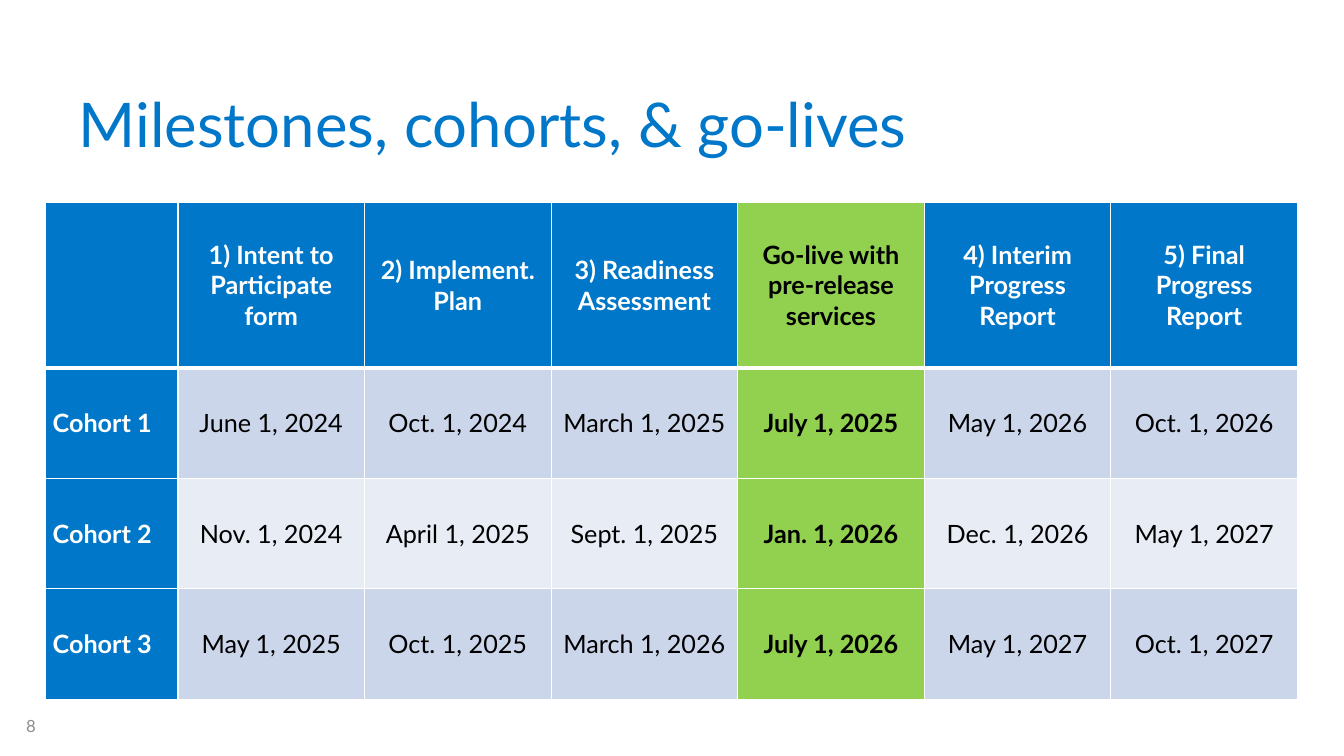
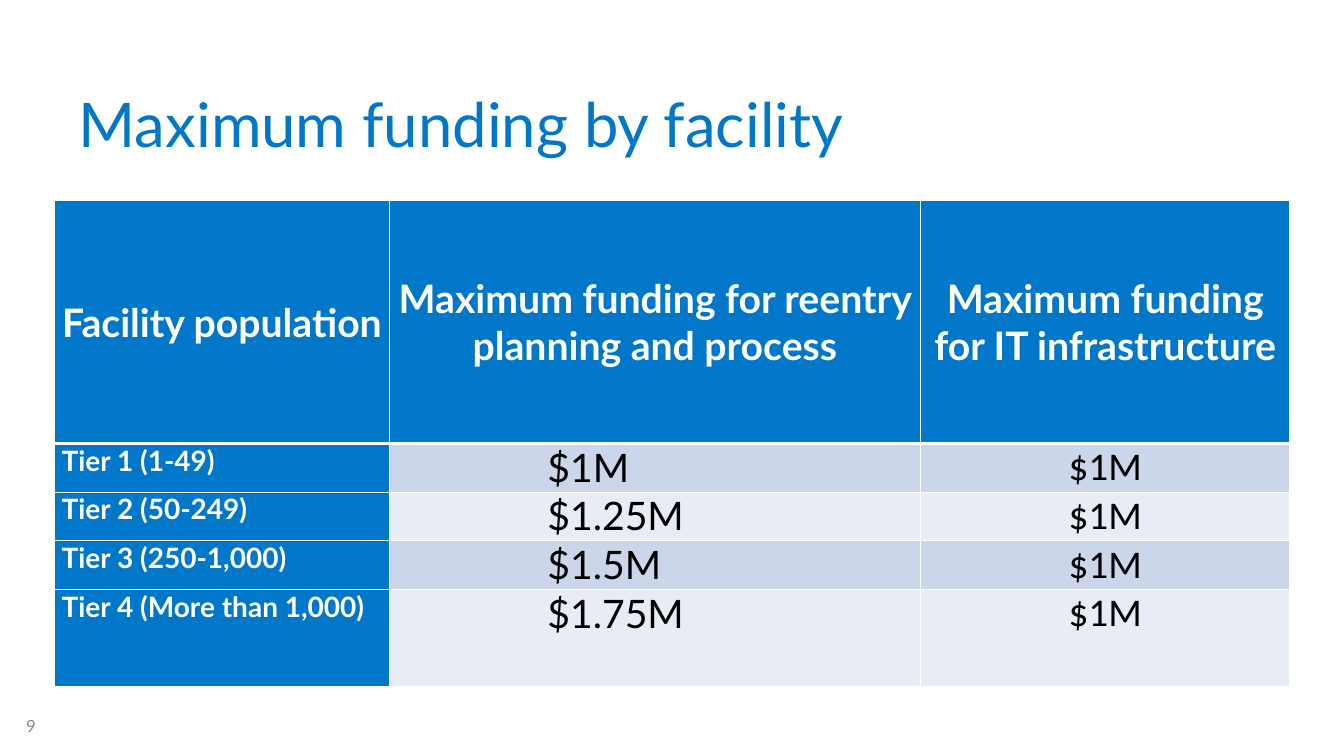
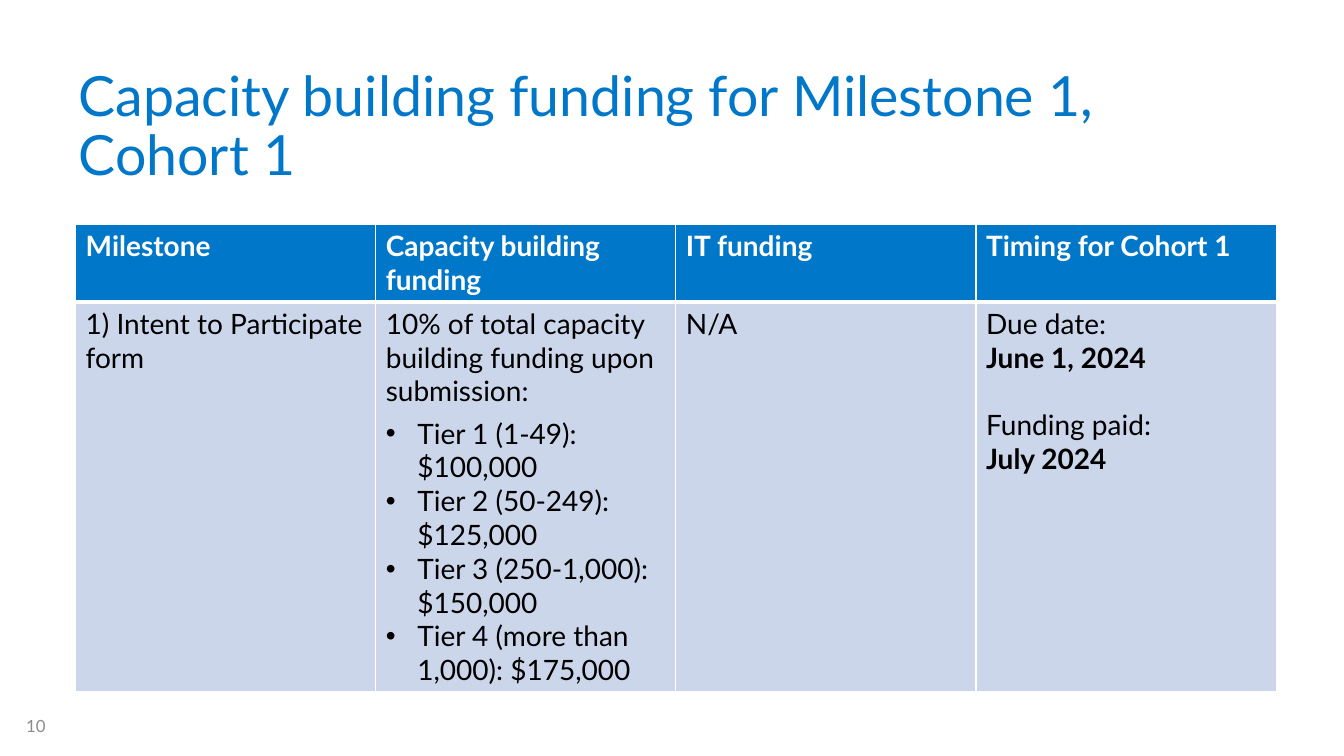
"""Build three slides on milestones, funding by facility and Milestone 1 funding."""
from pptx import Presentation
from pptx import util as u
from pptx.dml.color import RGBColor
from pptx.enum import text
from pptx.oxml import parse_xml
from pptx.oxml.ns import nsdecls

Pt = u.Pt
BLUE = RGBColor(0x00, 0x77, 0xC8)
GREEN = RGBColor(0x92, 0xD0, 0x50)
BAND_DARK = RGBColor(0xCC, 0xD6, 0xEB)
BAND_LIGHT = RGBColor(0xE7, 0xEC, 0xF5)
WHITE = RGBColor(0xFF, 0xFF, 0xFF)
BLACK = RGBColor(0x00, 0x00, 0x00)
GREY = RGBColor(0x8C, 0x8C, 0x8C)
FONT = "Lato"
CENTER, LEFT = text.PP_ALIGN.CENTER, text.PP_ALIGN.LEFT
MIDDLE, TOP = text.MSO_ANCHOR.MIDDLE, text.MSO_ANCHOR.TOP

TITLE_BOX = (49, 49.7, 857.5, 83.5)
NUMBER_BOX = (11.5, 511.9, 72.7, 13)
TIGHT, ROOMY = (5.04, 0), (7.2, 3.6)
BULLET_INDENT = 22.5

MILESTONES = [
    ["", "1) Intent to Participate form", "2) Implement.\nPlan", "3) Readiness Assessment",
     "Go-live with pre-release services", "4) Interim Progress Report", "5) Final Progress Report"],
    ["Cohort 1", "June 1, 2024", "Oct. 1, 2024", "March 1, 2025",
     "July 1, 2025", "May 1, 2026", "Oct. 1, 2026"],
    ["Cohort 2", "Nov. 1, 2024", "April 1, 2025", "Sept. 1, 2025",
     "Jan. 1, 2026", "Dec. 1, 2026", "May 1, 2027"],
    ["Cohort 3", "May 1, 2025", "Oct. 1, 2025", "March 1, 2026",
     "July 1, 2026", "May 1, 2027", "Oct. 1, 2027"],
]
FACILITIES = [
    ["Facility population", "Maximum funding for reentry planning and process",
     "Maximum funding for IT infrastructure"],
    ["Tier 1 (1-49)", "$1M", "$1M"],
    ["Tier 2 (50-249)", "$1.25M", "$1M"],
    ["Tier 3 (250-1,000)", "$1.5M", "$1M"],
    ["Tier 4 (More than 1,000)", "$1.75M", "$1M"],
]
TIERS = ["Tier 1 (1-49): $100,000", "Tier 2 (50-249): $125,000",
         "Tier 3 (250-1,000): $150,000", "Tier 4 (more than 1,000): $175,000"]
CAPACITY = [
    ["Milestone", "Capacity building funding", "IT funding", "Timing for Cohort 1"],
    ["1) Intent to Participate form",
     [{"text": "10% of total capacity building funding upon submission:", "after": 6}]
     + [{"text": tier, "bullet": True} for tier in TIERS],
     "N/A",
     [{"text": "Due date:\n", "strong": "June 1, 2024"},
      {"text": "Funding paid:\n", "strong": "July 2024", "before": 24}]],
]


def milestone_style(row, column):
    """Style a cell of the milestone table."""
    style = {"size": 18, "anchor": MIDDLE, "align": CENTER if column else LEFT}
    if column == 4:
        style.update(fill=GREEN, color=BLACK, bold=True)
    return style


def facility_style(row, column):
    """Style a cell of the facility table."""
    if row == 0:
        return {"size": 28, "anchor": MIDDLE, "align": CENTER}
    return [{"size": 20, "after": 3},
            {"size": 28, "after": 3, "indent": 108},
            {"size": 28, "after": 3, "align": CENTER, "font": "Calibri"}][column]


def capacity_style(row, column):
    """Style a cell of the capacity table."""
    return {"size": 20}


SLIDES = [
    {"title": "Milestones, cohorts, & go-lives", "title_size": 44, "rows": MILESTONES,
     "style": milestone_style, "at": (32.6, 144.7), "insets": TIGHT, "side_header": True,
     "widths": [94.5] + [133.3] * 6, "heights": [118] + [79] * 3},
    {"title": "Maximum funding by facility", "title_size": 44, "rows": FACILITIES,
     "style": facility_style, "at": (39, 143.4), "insets": TIGHT, "side_header": True,
     "widths": [239, 379.5, 264], "heights": [173.5] + [34.7] * 3 + [69.4]},
    {"title": "Capacity building funding for Milestone 1, Cohort 1", "title_size": 39.6,
     "rows": CAPACITY, "style": capacity_style, "at": (54, 160), "insets": ROOMY,
     "side_header": False, "widths": [214.4] * 4, "heights": [55, 278]},
]
FIRST_NUMBER = 8


def apply(target, **values):
    """Set each named attribute on the target."""
    for name, value in values.items():
        setattr(target, name, value)


def write(para, words, size, color, bold=False, font=FONT):
    """Add formatted text, with a line break at each newline."""
    for index, line in enumerate(words.split("\n")):
        if index:
            para.add_line_break()
        if line:
            span = para.add_run()
            span.text = line
            apply(span.font, size=Pt(size), bold=bold, name=font)
            span.font.color.rgb = color


def indent(para, left, first=0):
    """Indent a paragraph and hang its first line."""
    props = para._p.get_or_add_pPr()
    props.set("marL", str(Pt(left)))
    props.set("indent", str(Pt(first)))
    return props


def add_borders(cell, row):
    """Draw white borders, with a heavy rule under the header."""
    widths = {"L": 1, "R": 1, "T": 3 if row == 1 else 1, "B": 3 if row == 0 else 1}
    for side, width in widths.items():
        cell._tc.get_or_add_tcPr().append(parse_xml(
            f'<a:ln{side} {nsdecls("a")} w="{Pt(width)}"><a:solidFill>'
            f'<a:srgbClr val="{WHITE}"/></a:solidFill></a:ln{side}>'))


def fill_cell(cell, content, row, style, insets):
    """Format a cell and write its paragraphs."""
    across, down = map(Pt, insets)
    apply(cell, margin_left=across, margin_right=across, margin_top=down,
          margin_bottom=down, vertical_anchor=style.get("anchor", TOP))
    add_borders(cell, row)
    cell.fill.solid()
    cell.fill.fore_color.rgb = style["fill"]
    parts = [{"text": content}] if isinstance(content, str) else content
    for index, part in enumerate(parts):
        para = cell.text_frame.paragraphs[0] if index == 0 else cell.text_frame.add_paragraph()
        apply(para, alignment=style.get("align", LEFT), space_before=Pt(part.get("before", 0)),
              space_after=Pt(part.get("after", style.get("after", 0))))
        if "indent" in style:
            indent(para, style["indent"])
        if part.get("bullet"):
            props = indent(para, BULLET_INDENT, -BULLET_INDENT)
            for tag in ('buFont {} typeface="Arial"', 'buChar {} char="•"'):
                props.append(parse_xml(f'<a:{tag.format(nsdecls("a"))}/>'))
        look = (style["size"], style["color"])
        font = style.get("font", FONT)
        write(para, part["text"], *look, style["bold"], font)
        write(para, part.get("strong", ""), *look, True, font)


def add_grid(page, plan):
    """Add the table of a slide."""
    rows, widths, heights = plan["rows"], plan["widths"], plan["heights"]
    frame = page.shapes.add_table(len(rows), len(widths), *map(
        Pt, (*plan["at"], sum(widths), sum(heights))))
    grid = frame.table
    for column, width in zip(grid.columns, widths):
        column.width = Pt(width)
    for line, height in zip(grid.rows, heights):
        line.height = Pt(height)
    for r, row in enumerate(rows):
        for c, content in enumerate(row):
            header = r == 0 or (c == 0 and plan["side_header"])
            band = BAND_DARK if r % 2 else BAND_LIGHT
            style = {"fill": BLUE if header else band, "color": WHITE if header else BLACK,
                     "bold": header, **plan["style"](r, c)}
            fill_cell(grid.cell(r, c), content, r, style, plan["insets"])


def place(shape, box):
    """Move and size a shape."""
    apply(shape, **dict(zip(("left", "top", "width", "height"), map(Pt, box))))


def add_page(deck, plan, number):
    """Add a slide with its title, table and page number."""
    page = deck.slides.add_slide(deck.slide_layouts[5])
    title = page.shapes.title
    place(title, TITLE_BOX)
    footer = page.shapes.add_textbox(*map(Pt, NUMBER_BOX))
    labels = [(title, plan["title"], plan["title_size"], BLUE, 0.9),
              (footer, str(number), 12, GREY, 1.0)]
    for box, words, size, color, spacing in labels:
        apply(box.text_frame, word_wrap=True, vertical_anchor=MIDDLE,
              auto_size=text.MSO_AUTO_SIZE.NONE)
        para = box.text_frame.paragraphs[0]
        apply(para, alignment=LEFT, line_spacing=spacing)
        write(para, words, size, color)
    add_grid(page, plan)


def main():
    """Build and save the deck."""
    deck = Presentation()
    apply(deck, slide_width=Pt(960), slide_height=Pt(540))
    for number, plan in enumerate(SLIDES, FIRST_NUMBER):
        add_page(deck, plan, number)
    deck.save("out.pptx")


if __name__ == "__main__":
    main()
